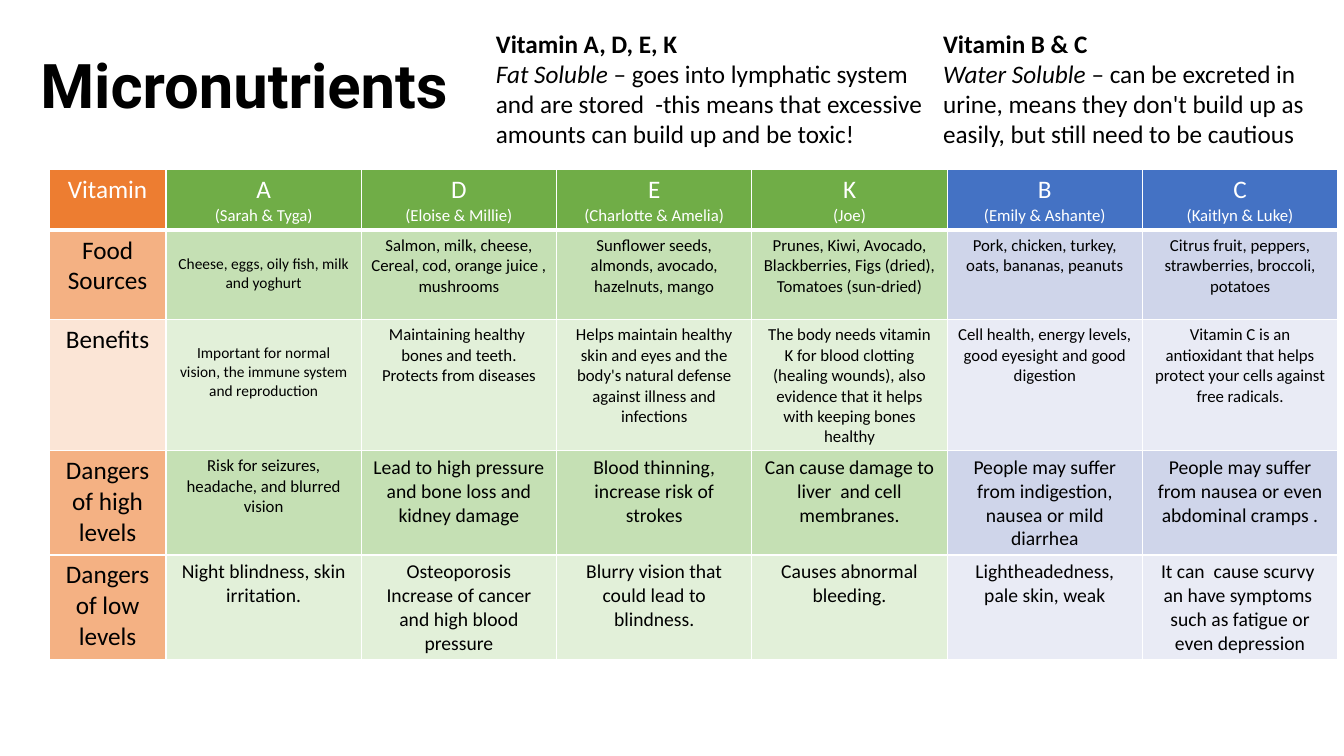
from dataclasses import dataclass

from lxml import etree
from pptx import Presentation
from pptx.dml.color import RGBColor
from pptx.enum.text import MSO_ANCHOR, MSO_AUTO_SIZE, PP_ALIGN
from pptx.oxml.ns import qn
from pptx.util import Inches, Pt

LEFT, CENTER = PP_ALIGN.LEFT, PP_ALIGN.CENTER
TOP, MIDDLE = MSO_ANCHOR.TOP, MSO_ANCHOR.MIDDLE
FIT_SHAPE, NO_FIT = MSO_AUTO_SIZE.SHAPE_TO_FIT_TEXT, MSO_AUTO_SIZE.NONE


@dataclass(frozen=True)
class Theme:
    heading: str = "Roboto"
    body: str = "Calibri"
    black: str = "000000"
    white: str = "FFFFFF"
    title: int = 44
    large: int = 18
    medium: int = 14
    small: int = 12
    tiny: int = 11
    # Fills from the header row down, for each group of columns
    labels: tuple = ("ED7D31", "F4B183", "FBE5D6", "F4B183", "F4B183")
    fat: tuple = ("70AD47", "C5E0B4", "E2F0D9", "C5E0B4", "E2F0D9")
    water: tuple = ("4472C4", "CFD5EA", "E9EBF5", "CFD5EA", "E9EBF5")


T = Theme()

# The slide is a grid of 160 columns by 90 rows, twelve to the inch
GRID_COLS, GRID_ROWS, PER_INCH = 160, 90, 12
COL_WIDTHS = [13.92] + [23.25] * 6
ROW_HEIGHTS = [7.25, 10.65, 15.6, 12.4, 12.4]
COL_FILLS = [T.labels] + [T.fat] * 4 + [T.water] * 2
LOWERED_CELLS = {(1, 1), (2, 1)}

HEADER = ["Vitamin", "A\n(Sarah & Tyga)", "D\n(Eloise & Millie)",
          "E\n(Charlotte & Amelia)", "K\n(Joe)", "B\n(Emily & Ashante)",
          "C\n(Kaitlyn & Luke)"]

# Each row: size in column A, size in the other columns, texts
BODY = [
    (T.tiny, T.small, [
        "Food Sources",
        "Cheese, eggs, oily fish, milk and yoghurt",
        "Salmon, milk, cheese,\nCereal, cod, orange juice , mushrooms",
        "Sunflower seeds, almonds, avocado, hazelnuts, mango",
        "Prunes, Kiwi, Avocado, Blackberries, Figs (dried), Tomatoes (sun-dried)",
        "Pork, chicken, turkey, oats, bananas, peanuts",
        "Citrus fruit, peppers, strawberries, broccoli, potatoes"]),
    (T.tiny, T.small, [
        "Benefits",
        "Important for normal vision, the immune system and reproduction",
        "Maintaining healthy  bones and teeth. Protects from diseases",
        "Helps maintain healthy skin and eyes and the body's natural defense "
        "against illness and infections",
        "The body needs vitamin K for blood clotting (healing wounds), also "
        "evidence that it helps with keeping bones healthy",
        "Cell health, energy levels, good eyesight and good digestion",
        "Vitamin C is an antioxidant that helps protect your cells against "
        "free radicals."]),
    (T.small, T.medium, [
        "Dangers of high levels",
        "Risk for seizures, headache, and blurred vision",
        "Lead to high pressure and bone loss and kidney damage",
        "Blood thinning, increase risk of strokes",
        "Can cause damage to liver  and cell membranes.",
        "People may suffer from indigestion, nausea or mild diarrhea",
        "People may suffer from nausea or even abdominal cramps ."]),
    (T.medium, T.medium, [
        "Dangers of low levels",
        "Night blindness, skin irritation.",
        "Osteoporosis\nIncrease of cancer and high blood pressure",
        "Blurry vision that could lead to blindness.",
        "Causes abnormal bleeding.",
        "Lightheadedness, pale skin, weak",
        "It can  cause scurvy  an have symptoms  such as fatigue or even "
        "depression"]),
]


def grid(n):
    return Inches(n / PER_INCH)


def style(r, size, color=T.black, font=T.body, bold=False, italic=False):
    f = r.font
    f.name, f.size, f.bold, f.italic = font, Pt(size), bold, italic
    f.color.rgb = RGBColor.from_string(color)


def add_title(s, text, *box):
    sp = s.shapes.title
    sp.left, sp.top, sp.width, sp.height = map(grid, box)
    tf = sp.text_frame
    tf.text = text
    tf.word_wrap, tf.auto_size, tf.vertical_anchor = True, NO_FIT, MIDDLE
    p = tf.paragraphs[0]
    p.alignment, p.line_spacing = LEFT, 0.9
    style(p.runs[0], T.title, font=T.heading, bold=True)


def add_note(s, heading, term, text, *box):
    tf = s.shapes.add_textbox(*map(grid, box)).text_frame
    tf.word_wrap, tf.auto_size = True, FIT_SHAPE
    tf.text = heading
    style(tf.paragraphs[0].runs[0], T.large, bold=True)
    p = tf.add_paragraph()
    for part, italic in ((term, True), (text, False)):
        r = p.add_run()
        r.text = part
        style(r, T.large, italic=italic)


def add_border(cell, side, width):
    ln = etree.SubElement(cell._tc.get_or_add_tcPr(), qn(f"a:ln{side}"),
                          w=str(Pt(width)))
    fill = etree.SubElement(ln, qn("a:solidFill"))
    etree.SubElement(fill, qn("a:srgbClr"), val=T.white)


def fill_cell(cell, text, sizes, color, fill, bottom=1, top=1):
    for side, width in (("L", 1), ("R", 1), ("T", top), ("B", bottom)):
        add_border(cell, side, width)
    cell.fill.solid()
    cell.fill.fore_color.rgb = RGBColor.from_string(fill)
    cell.vertical_anchor = TOP
    cell.text_frame.text = text
    for i, p in enumerate(cell.text_frame.paragraphs):
        p.alignment = CENTER
        style(p.runs[0], sizes[min(i, len(sizes) - 1)], color)


def add_vitamin_table(s, left, top):
    frame = s.shapes.add_table(len(ROW_HEIGHTS), len(COL_WIDTHS), grid(left),
                               grid(top), grid(sum(COL_WIDTHS)),
                               grid(sum(ROW_HEIGHTS)))
    table = frame.table
    table.first_row = table.horz_banding = False
    for col, width in zip(table.columns, COL_WIDTHS):
        col.width = grid(width)
    for row, height in zip(table.rows, ROW_HEIGHTS):
        row.height = grid(height)

    # Header row
    for c, text in enumerate(HEADER):
        fill_cell(table.cell(0, c), text, (T.large, T.small), T.white,
                  COL_FILLS[c][0], bottom=3)

    # Body rows
    for r, (size_a, size_rest, texts) in enumerate(BODY, start=1):
        sizes = [T.large, size_a] + [size_rest] * 5
        for c, text in enumerate(texts):
            fill_cell(table.cell(r, c), text, (sizes[c],), T.black,
                      COL_FILLS[c][r], top=3 if r == 1 else 1)
    for r, c in LOWERED_CELLS:
        table.cell(r, c).margin_top = Inches(0.24)


def main():
    prs = Presentation()
    prs.slide_width, prs.slide_height = grid(GRID_COLS), grid(GRID_ROWS)
    s = prs.slides.add_slide(prs.slide_layouts[5])

    add_title(s, "Micronutrients", 3.6, 1.9, 138, 17.4)
    add_note(s, "Vitamin A, D, E, K", "Fat Soluble",
             " – goes into lymphatic system and are stored  -this means that "
             "excessive amounts can build up and be toxic!",
             57.85, 2.75, 54.25, 15.75)
    add_note(s, "Vitamin B & C", "Water Soluble",
             " – can be excreted in urine, means they don't build up as "
             "easily, but still need to be cautious",
             111.1, 2.75, 48, 15.75)
    add_vitamin_table(s, 5.85, 20.15)
    prs.save("out.pptx")


if __name__ == "__main__":
    main()
